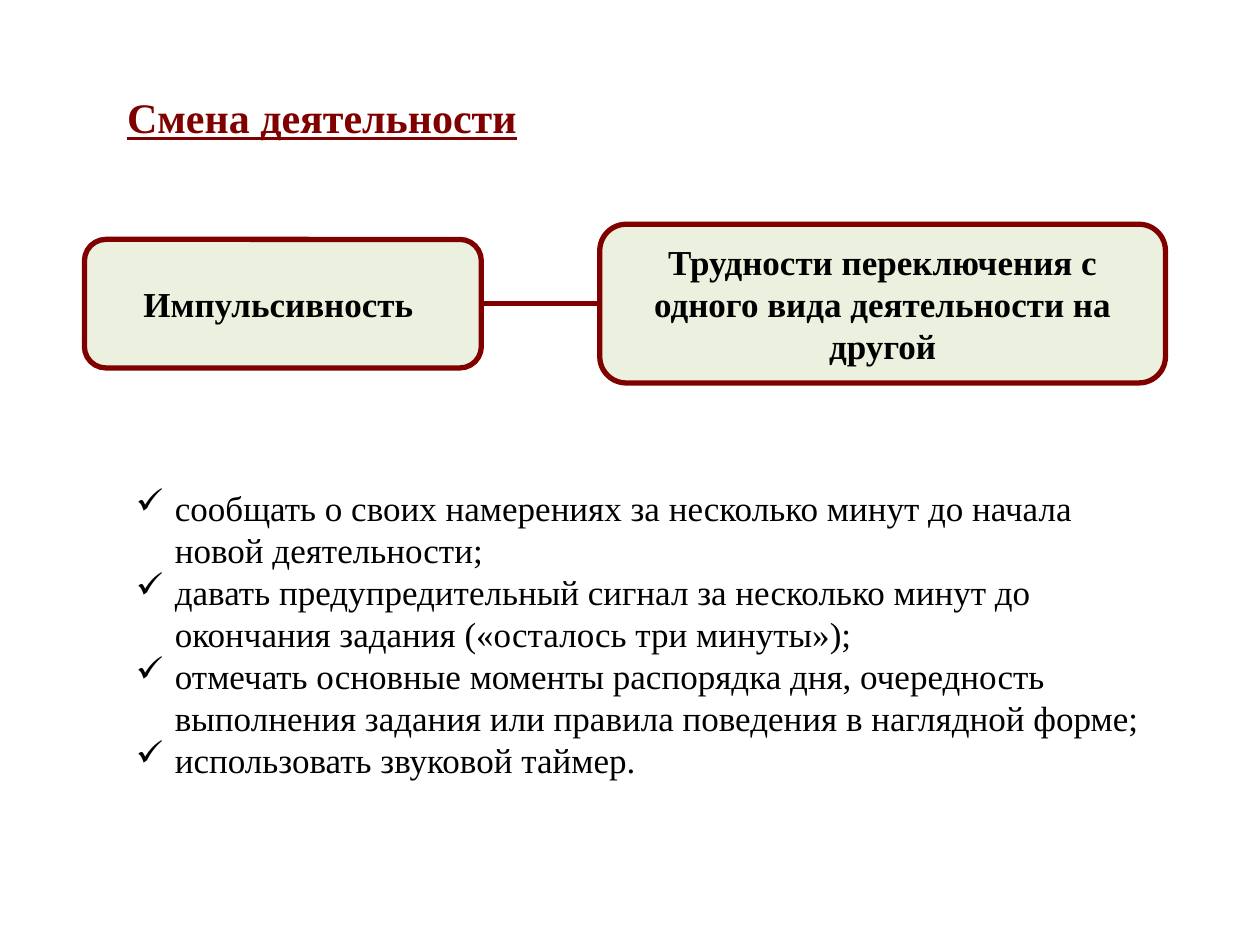
from pptx import Presentation
from pptx.dml.color import RGBColor
from pptx.enum.shapes import MSO_CONNECTOR, MSO_SHAPE
from pptx.enum.text import MSO_ANCHOR, PP_ALIGN
from pptx.oxml.ns import qn
from pptx.util import Inches, Pt
from lxml import etree

MAROON = RGBColor(0x80, 0x00, 0x00)
PALE_GREEN = RGBColor(0xEB, 0xF1, 0xDE)
BLACK = RGBColor(0x00, 0x00, 0x00)
ROUNDED = MSO_SHAPE.ROUNDED_RECTANGLE
STRAIGHT = MSO_CONNECTOR.STRAIGHT
CENTER = PP_ALIGN.CENTER
MIDDLE = MSO_ANCHOR.MIDDLE

TIPS = (
    "сообщать о своих намерениях за несколько минут до начала новой деятельности;",
    "давать предупредительный сигнал за несколько минут до окончания задания («осталось три минуты»);",
    "отмечать основные моменты распорядка дня, очередность выполнения задания или правила поведения в наглядной форме;",
    "использовать звуковой таймер.",
)


class SlideBuilder:
    """Draws elements on one slide in a shared style."""

    font_name = "Times New Roman"
    line_width = Pt(3)
    indent = Inches(0.31)

    def __init__(self, slide):
        self.slide = slide

    def set_font(self, paragraph, size=20, color=BLACK, bold=False, underline=False):
        font = paragraph.font
        font.name = self.font_name
        font.size = Pt(size)
        font.bold = bold
        font.underline = underline
        font.color.rgb = color

    def text_frame(self, left, top, width, height):
        box = self.slide.shapes.add_textbox(
            Inches(left), Inches(top), Inches(width), Inches(height))
        box.text_frame.word_wrap = True
        return box.text_frame

    def title(self, text, left, top, width, height):
        paragraph = self.text_frame(left, top, width, height).paragraphs[0]
        paragraph.text = text
        self.set_font(paragraph, 24, MAROON, bold=True, underline=True)

    def card(self, text, left, top, width, height):
        shape = self.slide.shapes.add_shape(
            ROUNDED, Inches(left), Inches(top), Inches(width), Inches(height))
        shape.shadow.inherit = False
        shape.fill.solid()
        shape.fill.fore_color.rgb = PALE_GREEN
        shape.line.color.rgb = MAROON
        shape.line.width = self.line_width
        shape.text_frame.word_wrap = True
        shape.text_frame.vertical_anchor = MIDDLE
        paragraph = shape.text_frame.paragraphs[0]
        paragraph.text = text
        paragraph.alignment = CENTER
        self.set_font(paragraph, bold=True)
        return shape

    def link(self, start, end):
        connector = self.slide.shapes.add_connector(STRAIGHT, 0, 0, 0, 0)
        connector.begin_connect(start, 3)
        connector.end_connect(end, 1)
        connector.line.color.rgb = MAROON
        connector.line.width = self.line_width
        etree.SubElement(connector._element.spPr, qn("a:effectLst"))

    def checklist(self, items, left, top, width, height):
        frame = self.text_frame(left, top, width, height)
        for index, item in enumerate(items):
            paragraph = frame.add_paragraph() if index else frame.paragraphs[0]
            paragraph.text = item
            properties = paragraph._p.get_or_add_pPr()
            properties.set("marL", str(self.indent))
            properties.set("indent", str(-self.indent))
            etree.SubElement(properties, qn("a:buChar"), char="✓")
            self.set_font(paragraph)


def main():
    presentation = Presentation()
    presentation.slide_width = Inches(10)
    presentation.slide_height = Inches(7.5)
    builder = SlideBuilder(presentation.slides.add_slide(presentation.slide_layouts[6]))

    builder.title("Смена деятельности", 0.91, 0.68, 6.61, 0.5)
    cause = builder.card("Импульсивность ", 0.67, 1.9, 3.15, 1.02)
    effect = builder.card(
        "Трудности переключения с одного вида деятельности на другой",
        4.76, 1.78, 4.49, 1.26)
    builder.link(cause, effect)
    builder.checklist(TIPS, 0.98, 3.81, 8.27, 2.79)

    presentation.save("out.pptx")


if __name__ == "__main__":
    main()
